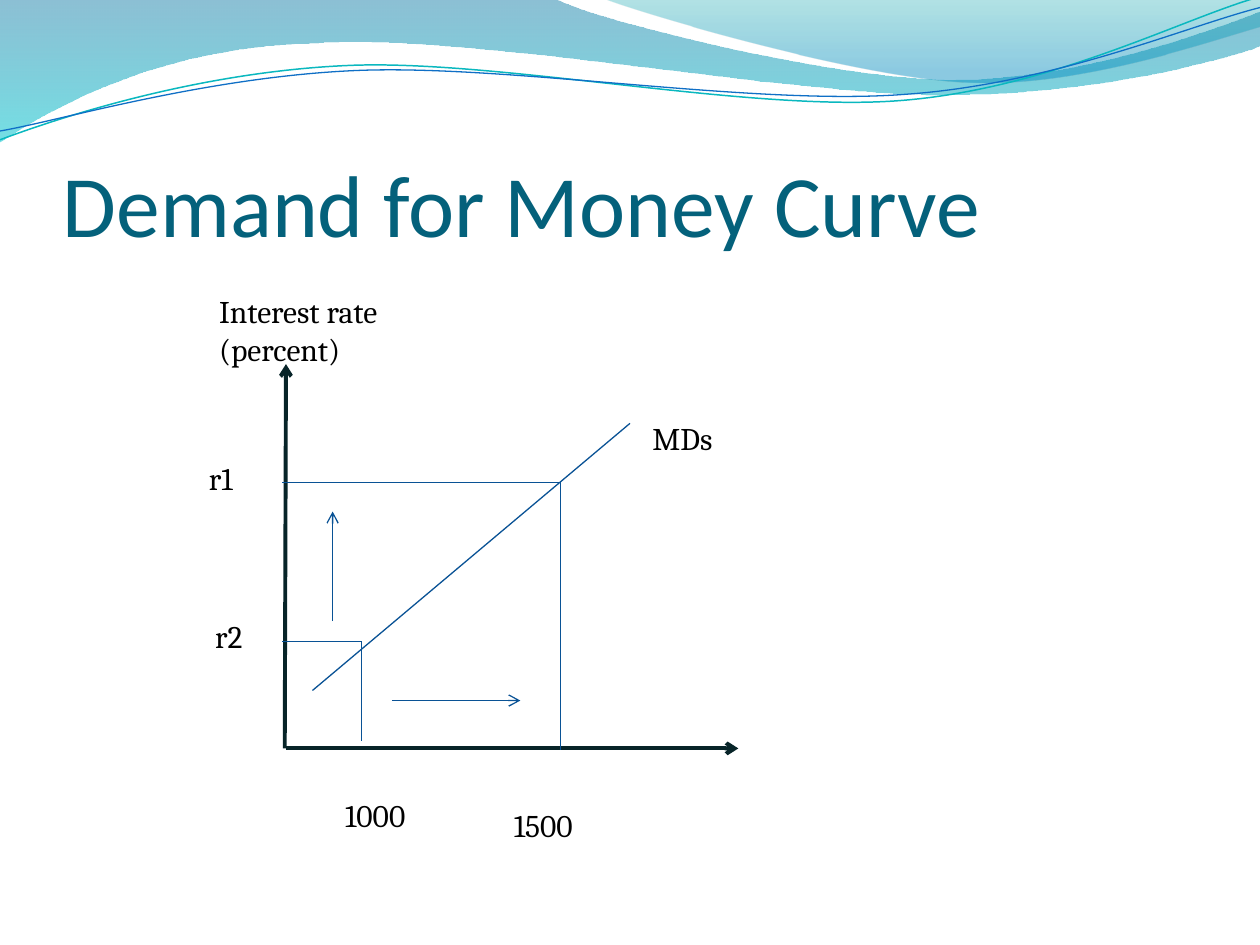
from dataclasses import dataclass
from itertools import chain

from lxml import etree
from pptx import Presentation
from pptx.dml.color import RGBColor
from pptx.enum.shapes import MSO_CONNECTOR
from pptx.enum.text import MSO_ANCHOR, MSO_AUTO_SIZE
from pptx.oxml.ns import qn
from pptx.util import Inches, Pt

STRAIGHT = MSO_CONNECTOR.STRAIGHT
TOP, BOTTOM = MSO_ANCHOR.TOP, MSO_ANCHOR.BOTTOM
FIT_SHAPE = MSO_AUTO_SIZE.SHAPE_TO_FIT_TEXT
NO_FIT = MSO_AUTO_SIZE.NONE

SLIDE_WIDTH, SLIDE_HEIGHT = Inches(10), Inches(7.5)
COLUMN, ROW = SLIDE_WIDTH / 10, SLIDE_HEIGHT / 7.5

AXIS, GUIDE, INK, TITLE = "072428", "095295", "000000", "04617B"
ORIGIN_X, ORIGIN_Y = 2.27, 5.94
GUIDE_START = 2.24
HIGH_RATE, LOW_RATE = 3.83, 5.09
HIGH_DEMAND, LOW_DEMAND = 4.45, 2.87

Point = tuple[float, float]


@dataclass
class Label:
    text: str
    column: float
    row: float
    columns: float
    rows: float = 0.4
    size: float = 18
    font: str = "Cambria"
    color: str = INK


@dataclass
class Stroke:
    start: Point
    end: Point
    color: str = GUIDE
    width: float = 0.75
    arrow: bool = False


@dataclass
class Stop:
    position: float
    color: str
    opacity: int


@dataclass
class Wave:
    start: Point
    segments: list[tuple[Point, ...]]
    stops: tuple[Stop, ...] = ()
    color: str = ""
    width: float = 0


WAVES = [
    Wave((0, 0), [
        ((4.4, -0.01),),
        ((4.76, 0.17), (6.64, 0.63), (7.58, 0.63)),
        ((8.53, 0.63), (9.58, 0.26), (10, 0.09)),
        ((10.01, 0.36),),
        ((9.83, 0.44), (8.7, 0.76), (7.46, 0.75)),
        ((6.22, 0.75), (3.82, 0.28), (2.57, 0.34)),
        ((1.29, 0.36), (0.46, 0.83), (-0.01, 1.13)),
    ], stops=(Stop(0, "0074A1", 45), Stop(1, "00C6CF", 55))),
    Wave((4.79, -0.01), [
        ((5.09, 0.11), (6.82, 0.62), (7.69, 0.65)),
        ((8.56, 0.69), (9.61, 0.32), (10, 0.21)),
        ((10, 0),),
    ], stops=(Stop(0, "00A1A9", 30), Stop(0.8, "008BBF", 45))),
    Wave((0, 1.11), [
        ((0.48, 0.93), (1.58, 0.57), (2.77, 0.52)),
        ((3.95, 0.47), (5.93, 0.89), (7.13, 0.8)),
        ((8.33, 0.71), (9.38, 0.15), (9.98, -0.02)),
    ], color="0AB8BF", width=0.85),
    Wave((0, 1.04), [
        ((0.47, 0.96), (1.64, 0.61), (2.83, 0.56)),
        ((4.03, 0.51), (5.97, 0.84), (7.17, 0.75)),
        ((8.36, 0.67), (9.41, 0.21), (10, 0.06)),
    ], color="0F6FC6", width=0.75),
]

HEADING = Label("Demand for Money Curve", 0.5, 0.77, 9, 1.25, 50, "Calibri", TITLE)

LABELS = [
    Label("Interest rate (percent)", 1.64, 2.27, 1.64, 0.71),
    Label("r1", 1.56, 3.59, 0.47),
    Label("MDs", 5.08, 3.28, 0.87),
    Label("r2", 1.61, 4.85, 0.47),
    Label("1000", 2.64, 6.27, 1.02),
    Label("1500", 3.98, 6.35, 0.79),
]

STROKES = [
    Stroke((2.26, ORIGIN_Y), (ORIGIN_X, 2.89), AXIS, 2.25, True),
    Stroke((ORIGIN_X, ORIGIN_Y), (5.86, ORIGIN_Y), AXIS, 2.25, True),
    Stroke((2.48, 5.48), (5, 3.36)),
    Stroke((GUIDE_START, HIGH_RATE), (HIGH_DEMAND, HIGH_RATE)),
    Stroke((HIGH_DEMAND, HIGH_RATE), (HIGH_DEMAND, 5.95)),
    Stroke((GUIDE_START, LOW_RATE), (LOW_DEMAND, LOW_RATE)),
    Stroke((LOW_DEMAND, LOW_RATE), (LOW_DEMAND, 5.88)),
    Stroke((2.64, 4.93), (2.64, 4.06), arrow=True),
    Stroke((3.11, 5.56), (4.13, 5.56), arrow=True),
]


def rgb(color: str) -> RGBColor:
    return RGBColor.from_string(color)


def place(point: Point) -> tuple[int, int]:
    return round(point[0] * COLUMN), round(point[1] * ROW)


def bend(ribbon, segments: list[tuple[Point, ...]]) -> None:
    outline = next(ribbon.element.spPr.iter(qn("a:path")))
    corners = iter(outline.findall(qn("a:lnTo")))
    for segment in segments:
        sides = [next(corners) for _ in segment]
        if len(sides) == 1:
            continue
        curve = etree.Element(qn("a:cubicBezTo"))
        sides[0].addprevious(curve)
        for side in sides:
            curve.append(side[0])
            outline.remove(side)


def draw_wave(slide, wave: Wave) -> None:
    builder = slide.shapes.build_freeform(*place(wave.start), scale=1.0)
    corners = [place(point) for point in chain.from_iterable(wave.segments)]
    builder.add_line_segments(corners, close=bool(wave.stops))
    ribbon = builder.convert_to_shape()
    bend(ribbon, wave.segments)
    ribbon.shadow.inherit = False
    if not wave.stops:
        ribbon.fill.background()
        ribbon.line.color.rgb = rgb(wave.color)
        ribbon.line.width = Pt(wave.width)
        return
    ribbon.line.fill.background()
    ribbon.fill.gradient()
    ribbon.fill.gradient_angle = 270
    for gradient_stop, stop in zip(ribbon.fill.gradient_stops, wave.stops):
        gradient_stop.position = stop.position
        gradient_stop.color.rgb = rgb(stop.color)
    for tint, stop in zip(ribbon.element.spPr.iter(qn("a:srgbClr")), wave.stops):
        etree.SubElement(tint, qn("a:alpha"), val=str(stop.opacity * 1000))


def draw_label(slide, label: Label):
    box = slide.shapes.add_textbox(
        *place((label.column, label.row)), *place((label.columns, label.rows)))
    frame = box.text_frame
    frame.word_wrap = True
    frame.auto_size = FIT_SHAPE
    frame.vertical_anchor = TOP
    frame.text = label.text
    font = frame.paragraphs[0].runs[0].font
    font.name, font.size = label.font, Pt(label.size)
    font.color.rgb = rgb(label.color)
    return frame


def draw_heading(slide, heading: Label) -> None:
    frame = draw_label(slide, heading)
    frame.auto_size = NO_FIT
    frame.vertical_anchor = BOTTOM
    frame.margin_left = frame.margin_right = frame.margin_bottom = 0


def draw_stroke(slide, stroke: Stroke) -> None:
    connector = slide.shapes.add_connector(STRAIGHT, *place(stroke.start), *place(stroke.end))
    connector.line.color.rgb = rgb(stroke.color)
    connector.line.width = Pt(stroke.width)
    properties = connector.element.spPr
    if stroke.arrow:
        etree.SubElement(properties.find(qn("a:ln")), qn("a:tailEnd"), type="arrow")
    etree.SubElement(properties, qn("a:effectLst"))


def main() -> None:
    deck = Presentation()
    deck.slide_width, deck.slide_height = SLIDE_WIDTH, SLIDE_HEIGHT
    slide = deck.slides.add_slide(deck.slide_layouts[6])
    for wave in WAVES:
        draw_wave(slide, wave)
    draw_heading(slide, HEADING)
    for stroke in STROKES:
        draw_stroke(slide, stroke)
    for label in LABELS:
        draw_label(slide, label)
    deck.save("out.pptx")


if __name__ == "__main__":
    main()
